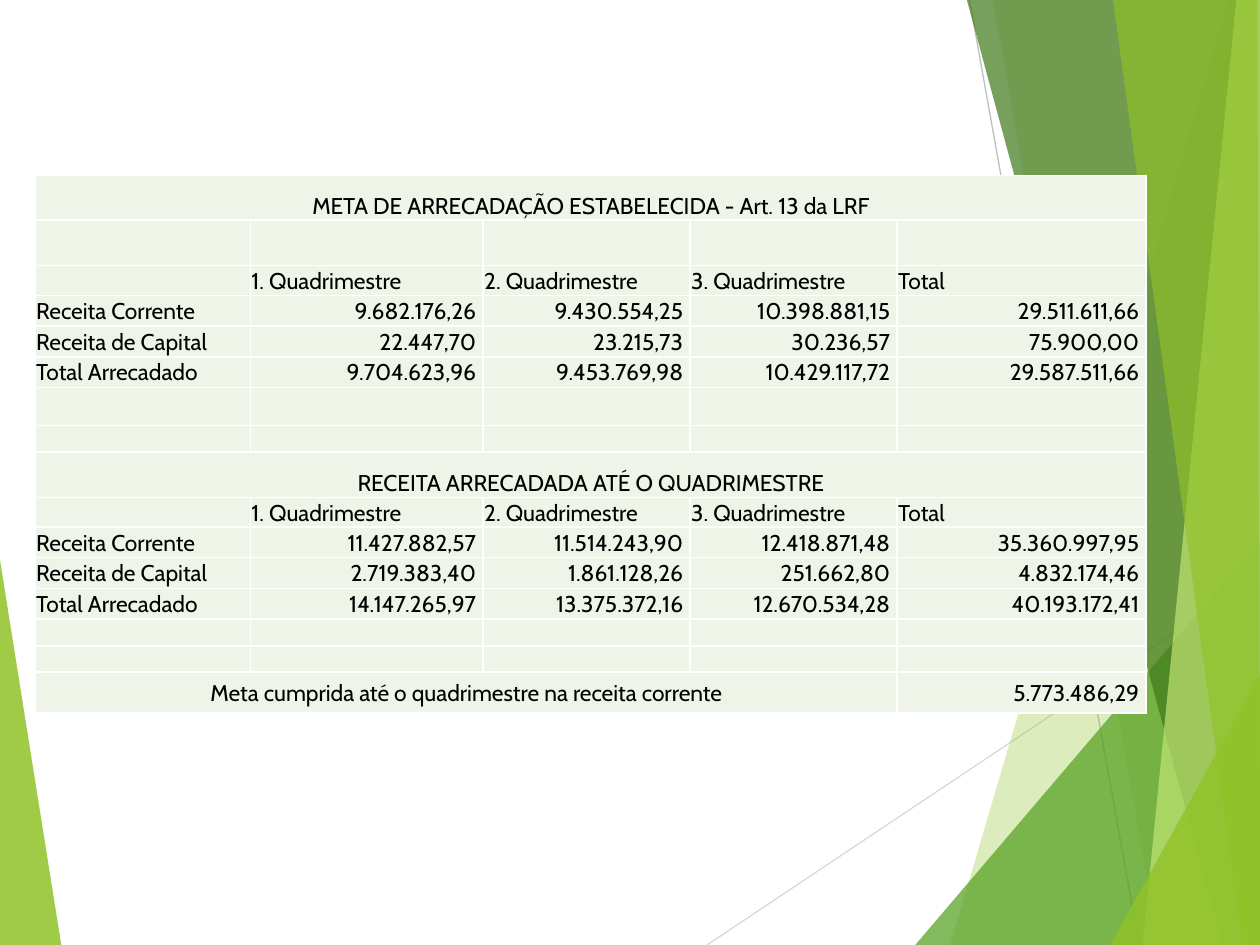
import dataclasses

import lxml.etree
import pptx
import pptx.dml.color
import pptx.enum.shapes
import pptx.enum.text
import pptx.oxml.ns
import pptx.slide
import pptx.util

Pt = pptx.util.Pt
qn = pptx.oxml.ns.qn
ALIGN = pptx.enum.text.PP_ALIGN
ANCHOR = pptx.enum.text.MSO_ANCHOR


@dataclasses.dataclass(frozen=True)
class Theme:
    font: str = "Cabin"
    text_size: float = 13
    empty_size: float = 10
    text: str = "000000"
    cell: str = "EEF4E8"
    border: str = "FFFFFF"
    lime: str = "90C226"
    green: str = "54A021"
    forest: str = "3F7819"
    pale_lime: str = "C0E474"
    light_gray: str = "D9D9D9"
    gray: str = "BFBFBF"


def rgb(color):
    return pptx.dml.color.RGBColor.from_string(color)


def set_all(target, values):
    for name, value in values.items():
        setattr(target, name, value)


@dataclasses.dataclass
class SlideBuilder:
    theme: Theme
    slide: pptx.slide.Slide

    def line(self, start, end, color):
        connector = self.slide.shapes.add_connector(
            pptx.enum.shapes.MSO_CONNECTOR.STRAIGHT,
            *(Pt(value) for value in start + end))
        connector.line.width = Pt(0.75)
        connector.line.color.rgb = rgb(color)
        properties = connector._element.spPr
        lxml.etree.SubElement(properties, qn("a:effectLst"))

    def facet(self, points, color, opacity):
        """Draw a borderless polygon; opacity is a percentage."""
        corners = [(Pt(x), Pt(y)) for x, y in points]
        builder = self.slide.shapes.build_freeform(*corners[0], scale=1.0)
        builder.add_line_segments(corners[1:], close=True)
        shape = builder.convert_to_shape()
        shape.shadow.inherit = False
        shape.line.fill.background()
        shape.fill.solid()
        shape.fill.fore_color.rgb = rgb(color)
        color_node = shape._element.spPr.find(".//" + qn("a:srgbClr"))
        lxml.etree.SubElement(color_node, qn("a:alpha"), val=str(opacity * 1000))

    def borders(self, cell):
        properties = cell._tc.get_or_add_tcPr()
        for side in ("a:lnL", "a:lnR", "a:lnT", "a:lnB"):
            line = lxml.etree.SubElement(properties, qn(side), w=str(Pt(1)))
            fill = lxml.etree.SubElement(line, qn("a:solidFill"))
            lxml.etree.SubElement(fill, qn("a:srgbClr"), val=self.theme.border)

    def cell(self, cell, text, align, anchor):
        self.borders(cell)
        cell.fill.solid()
        cell.fill.fore_color.rgb = rgb(self.theme.cell)
        right = 4 if align == ALIGN.RIGHT else 0.7
        set_all(cell, {"margin_left": Pt(0.7), "margin_top": Pt(0.7),
                       "margin_right": Pt(right), "margin_bottom": 0,
                       "vertical_anchor": anchor})
        para = cell.text_frame.paragraphs[0]
        if not text:
            lxml.etree.SubElement(para._p, qn("a:endParaRPr"),
                                  sz=str(self.theme.empty_size * 100))
            return
        para.alignment = align
        span = para.add_run()
        span.text = text
        set_all(span.font, {"name": self.theme.font,
                            "size": Pt(self.theme.text_size)})
        span.font.color.rgb = rgb(self.theme.text)

    def table(self, left, top, widths, heights, rows):
        """Fill a table; a row shorter than the grid starts with a merged cell."""
        frame = self.slide.shapes.add_table(
            len(heights), len(widths), Pt(left), Pt(top),
            Pt(sum(widths)), Pt(sum(heights)))
        table = frame.table
        set_all(table, {"first_row": False, "horz_banding": False})
        for column, width in zip(table.columns, widths):
            column.width = Pt(width)
        for row, height in zip(table.rows, heights):
            row.height = Pt(height)
        for row_index, values in enumerate(rows):
            merged = len(widths) - len(values)
            if merged:
                table.cell(row_index, 0).merge(table.cell(row_index, merged))
            values = values[:1] + [""] * merged + values[1:]
            is_heading = merged == len(widths) - 1 or values[-1] == "Total"
            anchor = ANCHOR.BOTTOM if is_heading else ANCHOR.MIDDLE
            for column_index, text in enumerate(values):
                if column_index == 0:
                    align = ALIGN.CENTER if merged else ALIGN.LEFT
                else:
                    align = ALIGN.LEFT if is_heading else ALIGN.RIGHT
                self.cell(table.cell(row_index, column_index), text, align, anchor)


EMPTY_ROW = [""] * 5
HEADINGS = ["", "1. Quadrimestre", "2. Quadrimestre", "3. Quadrimestre", "Total"]
REVENUE_ROWS = [
    ["META DE ARRECADAÇÃO ESTABELECIDA - Art. 13 da LRF"],
    EMPTY_ROW,
    HEADINGS,
    ["Receita Corrente", "9.682.176,26", "9.430.554,25", "10.398.881,15", "29.511.611,66"],
    ["Receita de Capital", "22.447,70", "23.215,73", "30.236,57", "75.900,00"],
    ["Total Arrecadado", "9.704.623,96", "9.453.769,98", "10.429.117,72", "29.587.511,66"],
    EMPTY_ROW,
    EMPTY_ROW,
    ["RECEITA ARRECADADA ATÉ O QUADRIMESTRE"],
    HEADINGS,
    ["Receita Corrente", "11.427.882,57", "11.514.243,90", "12.418.871,48", "35.360.997,95"],
    ["Receita de Capital", "2.719.383,40", "1.861.128,26", "251.662,80", "4.832.174,46"],
    ["Total Arrecadado", "14.147.265,97", "13.375.372,16", "12.670.534,28", "40.193.172,41"],
    EMPTY_ROW,
    EMPTY_ROW,
    ["Meta cumprida até o quadrimestre na receita corrente", "5.773.486,29"],
]
COLUMN_WIDTHS = [123, 133, 118.3, 118.3, 142.3]
ROW_HEIGHTS = [25.5, 26, 17, 17.6, 17.6, 17.6, 21.7, 15,
               26, 17, 17.6, 17.6, 17.6, 15.2, 15, 23.5]


def main():
    deck = pptx.Presentation()
    deck.slide_width, deck.slide_height = Pt(720), Pt(540)
    theme = Theme()
    page = SlideBuilder(theme, deck.slides.add_slide(deck.slide_layouts[6]))

    page.facet([(0, 320), (35, 540), (0, 540)], theme.lime, 85)
    page.line((404, 540), (720, 329), theme.light_gray)
    page.line((554, 0), (651, 540), theme.gray)
    right_facets = [
        ([(702, 0), (543, 540), (720, 540), (720, 0)], theme.lime, 30),
        ([(567.5, 0), (662, 540), (720, 540), (720, 0)], theme.lime, 20),
        ([(523, 540), (720, 309), (720, 540)], theme.green, 72),
        ([(552.5, 0), (698.5, 540), (720, 540), (720, 0)], theme.forest, 70),
        ([(706.5, 0), (653, 540), (720, 540), (720, 0)], theme.pale_lime, 70),
        ([(636, 0), (710, 540), (720, 540), (718.5, 0)], theme.lime, 65),
        ([(634.5, 540), (720, 385.5), (720, 540)], theme.lime, 80),
    ]
    for points, color, opacity in right_facets:
        page.facet(points, color, opacity)

    page.table(20, 100.3, COLUMN_WIDTHS, ROW_HEIGHTS, REVENUE_ROWS)
    deck.save("out.pptx")


if __name__ == "__main__":
    main()
